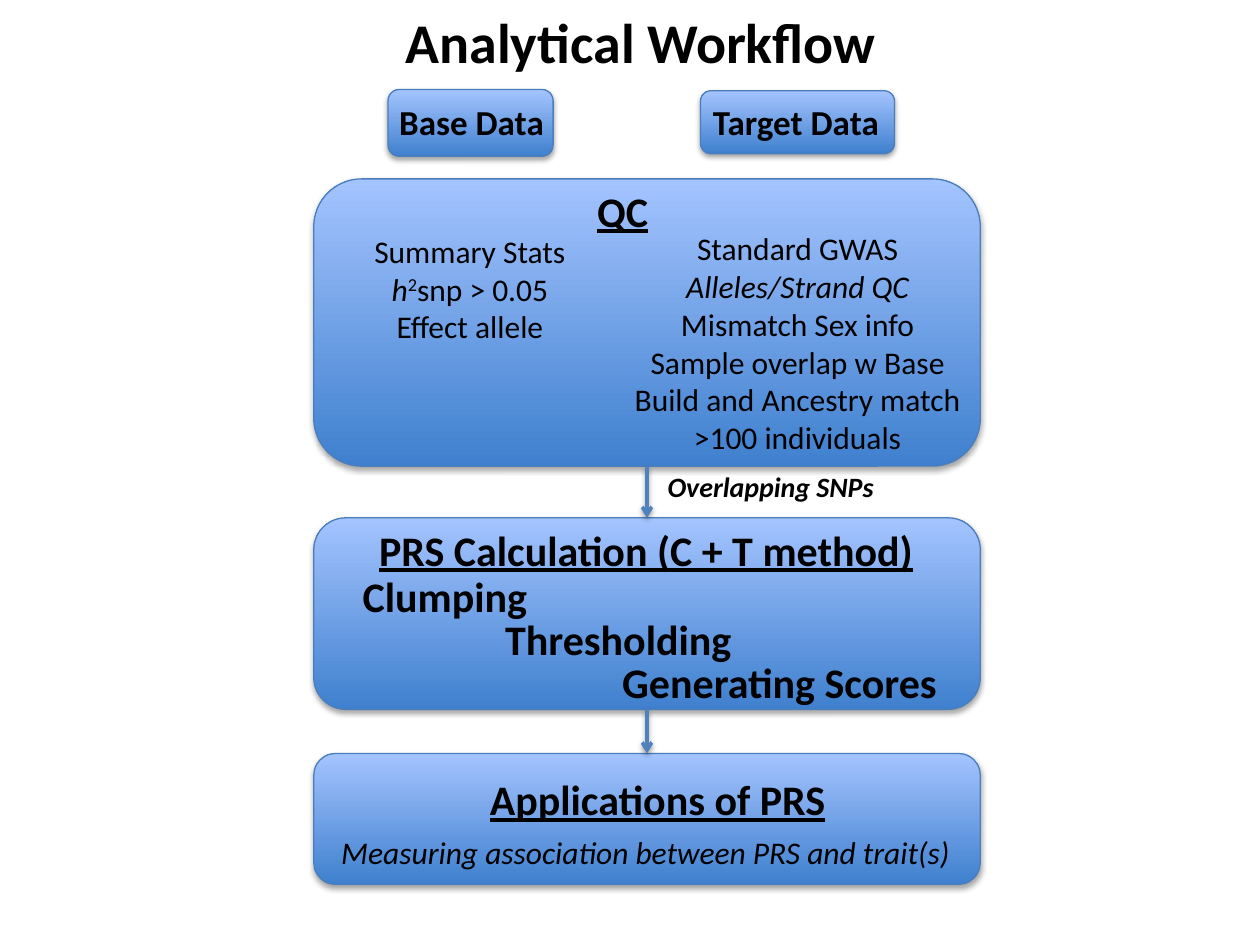
from dataclasses import dataclass

from lxml import etree
from pptx import Presentation
from pptx.dml.color import RGBColor
from pptx.enum.shapes import MSO_CONNECTOR, MSO_SHAPE
from pptx.enum.text import MSO_AUTO_SIZE, PP_ALIGN
from pptx.oxml import parse_xml
from pptx.oxml.ns import qn
from pptx.shapes.autoshape import Shape
from pptx.util import Inches, Pt

ROUND = MSO_SHAPE.ROUNDED_RECTANGLE
STRAIGHT = MSO_CONNECTOR.STRAIGHT
FIT = MSO_AUTO_SIZE.SHAPE_TO_FIT_TEXT
LEFT, CENTER = PP_ALIGN.LEFT, PP_ALIGN.CENTER
TOP, BOTTOM = 0, 2
WIDE, HIGH = Inches(10), Inches(7.5)
FONT, BLACK = "Calibri", "000000"
DARK, LIGHT, EDGE, ARROW = "3F80CE", "A4C4FF", "4B7EBC", "4F81BD"
DRAW = "http://schemas.openxmlformats.org/drawingml/2006/main"


@dataclass
class Area:
    """Left, top, width and height in percent of the slide."""
    left: float
    top: float
    width: float
    height: float

    def frame(self) -> tuple[int, int, int, int]:
        return (round(WIDE * self.left / 100), round(HIGH * self.top / 100),
                round(WIDE * self.width / 100), round(HIGH * self.height / 100))


@dataclass
class Run:
    text: str
    italic: bool = False
    raised: bool = False


@dataclass
class Label:
    area: Area
    lines: list[list[Run]]
    size: int
    bold: bool = False
    italic: bool = False
    under: bool = False
    align: PP_ALIGN = LEFT


def color(code: str) -> RGBColor:
    return RGBColor.from_string(code)


def add_shadow(shape, alpha: int, gap: float) -> None:
    shape._element.spPr.append(parse_xml(
        f'<a:effectLst xmlns:a="{DRAW}">'
        f'<a:outerShdw blurRad="{Pt(3.1)}" dist="{Pt(gap)}" dir="5400000" rotWithShape="0">'
        f'<a:srgbClr val="{BLACK}"><a:alpha val="{alpha * 1000}"/></a:srgbClr>'
        '</a:outerShdw></a:effectLst>'))


def add_box(slide, area: Area) -> Shape:
    box = slide.shapes.add_shape(ROUND, *area.frame())
    box.fill.gradient()
    box.fill.gradient_angle = 90
    for stop, code in zip(box.fill.gradient_stops, (DARK, LIGHT)):
        stop.color.rgb = color(code)
    box.line.color.rgb = color(EDGE)
    box.line.width = Pt(0.75)
    add_shadow(box, 35, 1.8)
    return box


def add_text(slide, label: Label) -> None:
    frame = slide.shapes.add_textbox(*label.area.frame()).text_frame
    frame.word_wrap = False
    frame.auto_size = FIT
    for row, runs in enumerate(label.lines):
        para = frame.add_paragraph() if row else frame.paragraphs[0]
        para.alignment = label.align
        for part in runs:
            run = para.add_run()
            run.text = part.text
            font = run.font
            font.name, font.size = FONT, Pt(label.size)
            font.bold, font.underline = label.bold, label.under
            font.italic = label.italic or part.italic
            font.color.rgb = color(BLACK)
            if part.raised:
                run._r.get_or_add_rPr().set("baseline", "30000")


def add_arrow(slide, start: Shape, end: Shape) -> None:
    arrow = slide.shapes.add_connector(STRAIGHT, 0, 0, 0, 0)
    arrow.begin_connect(start, BOTTOM)
    arrow.end_connect(end, TOP)
    arrow.line.color.rgb = color(ARROW)
    arrow.line.width = Pt(2)
    etree.SubElement(arrow.line._get_or_add_ln(), qn("a:tailEnd"), type="arrow")
    add_shadow(arrow, 38, 1.6)


def label(area: Area, text: str, **form) -> Label:
    return Label(area, [[Run(text)]], **form)


HEADS = [Area(55.6, 9.6, 15.4, 6.67), Area(30.8, 9.47, 13.1, 7.07)]
STEPS = [Area(24.9, top, 52.9, height)
         for top, height in ((18.93, 30.4), (54.8, 20.27), (79.73, 13.87))]

BASE = [
    [Run("Summary Stats")],
    [Run("h", italic=True), Run("2", raised=True), Run("snp > 0.05")],
    [Run("Effect allele")],
]
TARGET = [
    [Run("Standard GWAS")],
    [Run("Alleles/Strand QC", italic=True)],
    [Run("Mismatch Sex info")],
    [Run("Sample overlap w Base")],
    [Run("Build and Ancestry match")],
    [Run(">100 individuals")],
]

HEAD = dict(size=20, bold=True)
STEP = dict(size=24, bold=True)
TITLE = dict(STEP, under=True)
LABELS = [
    label(Area(31.2, 0.13, 39.9, 8.53), "Analytical Workflow", size=32, bold=True),
    label(Area(30.7, 10, 13.7, 5.87), "Base Data", **HEAD),
    label(Area(55.6, 10, 15.6, 5.87), "Target Data", **HEAD),
    label(Area(46.4, 18.93, 6.1, 6.67), "QC", **TITLE),
    Label(Area(28.5, 23.87, 17.6, 13.47), BASE, size=18, align=CENTER),
    Label(Area(49.2, 23.6, 28.2, 25.6), TARGET, size=18, align=CENTER),
    label(Area(52, 49.07, 18.7, 4.93), "Overlapping SNPs", size=16, bold=True, italic=True),
    label(Area(29.1, 54.8, 44.9, 6.67), "PRS Calculation (C + T method)", **TITLE),
    label(Area(27.8, 59.73, 15.2, 6.67), "Clumping", **STEP),
    label(Area(39.1, 64.27, 20.2, 6.67), "Thresholding", **STEP),
    label(Area(48.4, 68.8, 27.4, 6.67), "Generating Scores", **STEP),
    label(Area(37.9, 81.2, 29, 6.67), "Applications of PRS", **TITLE),
    label(Area(26.1, 87.47, 50.8, 5.33), "Measuring association between PRS and trait(s)",
          size=18, italic=True),
]


def main() -> None:
    deck = Presentation()
    deck.slide_width, deck.slide_height = WIDE, HIGH
    slide = deck.slides.add_slide(deck.slide_layouts[6])
    for area in HEADS:
        add_box(slide, area)
    steps = [add_box(slide, area) for area in STEPS]
    for start, end in zip(steps, steps[1:]):
        add_arrow(slide, start, end)
    for item in LABELS:
        add_text(slide, item)
    deck.save("out.pptx")


if __name__ == "__main__":
    main()
